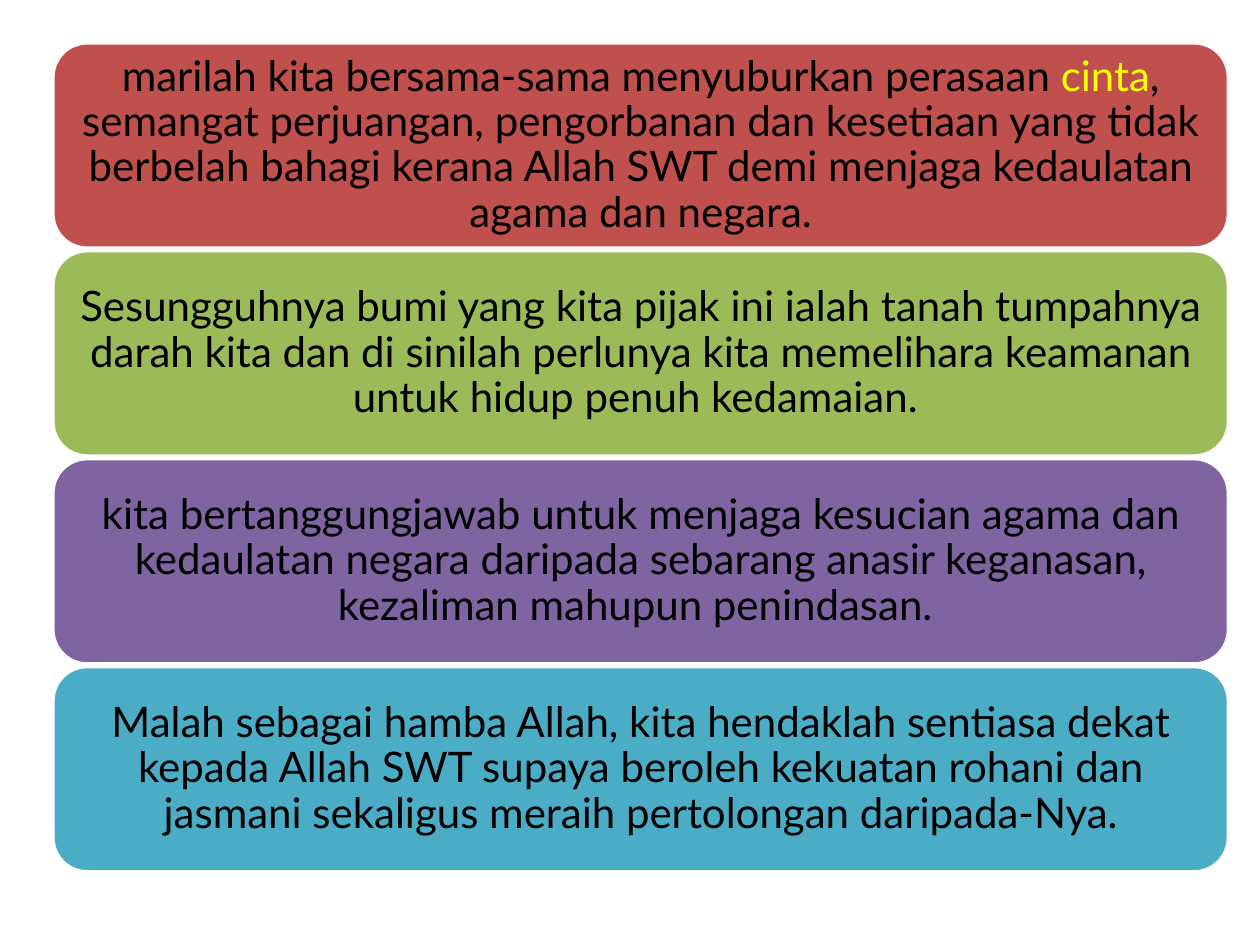
import pptx
import pptx.dml.color
import pptx.enum.shapes
import pptx.enum.text
import pptx.util


def color(hex_string):
    return pptx.dml.color.RGBColor.from_string(hex_string)


class MessageSlide:
    """Holds the style and the current slide, and draws stacked message bands."""

    font_name = "Lato"
    font_size = 24
    text_color = "000000"
    line_color = "FFFFFF"
    left, top = 0.42, 0.34
    width, height = 9.33, 1.63
    row_step = 1.65
    inset = 0.1

    def __init__(self, presentation):
        self.slide = presentation.slides.add_slide(presentation.slide_layouts[6])

    def add_band(self, row, fill, runs):
        shape = self.slide.shapes.add_shape(
            pptx.enum.shapes.MSO_SHAPE.ROUNDED_RECTANGLE,
            pptx.util.Inches(self.left),
            pptx.util.Inches(self.top + row * self.row_step),
            pptx.util.Inches(self.width),
            pptx.util.Inches(self.height),
        )
        shape.shadow.inherit = False
        shape.fill.solid()
        shape.fill.fore_color.rgb = color(fill)
        shape.line.color.rgb = color(self.line_color)
        shape.line.width = pptx.util.Pt(2)
        self.add_message(shape.text_frame, runs)

    def add_message(self, frame, runs):
        frame.word_wrap = True
        frame.vertical_anchor = pptx.enum.text.MSO_ANCHOR.MIDDLE
        frame.margin_left = frame.margin_right = pptx.util.Inches(self.inset)
        frame.margin_top = frame.margin_bottom = pptx.util.Inches(self.inset)
        paragraph = frame.paragraphs[0]
        paragraph.alignment = pptx.enum.text.PP_ALIGN.CENTER
        paragraph.line_spacing = 0.9
        paragraph.font.name = self.font_name
        paragraph.font.size = pptx.util.Pt(self.font_size)
        for text, text_color in runs:
            run = paragraph.add_run()
            run.text = text
            run.font.color.rgb = color(text_color)


def main():
    presentation = pptx.Presentation()
    presentation.slide_width = pptx.util.Inches(10)
    presentation.slide_height = pptx.util.Inches(7.5)
    message_slide = MessageSlide(presentation)
    black, yellow = MessageSlide.text_color, "FFFF00"
    bands = [
        ("C0504D", [
            ("marilah kita bersama-sama menyuburkan perasaan ", black),
            ("cinta", yellow),
            (", semangat perjuangan, pengorbanan dan kesetiaan yang tidak "
             "berbelah bahagi kerana Allah SWT demi menjaga kedaulatan "
             "agama dan negara.", black),
        ]),
        ("9BBB59", [
            ("Sesungguhnya bumi yang kita pijak ini ialah tanah tumpahnya "
             "darah kita dan di sinilah perlunya kita memelihara keamanan "
             "untuk hidup penuh kedamaian. ", black),
        ]),
        ("8064A2", [
            ("kita bertanggungjawab untuk menjaga kesucian agama dan "
             "kedaulatan negara daripada sebarang anasir keganasan, "
             "kezaliman mahupun penindasan. ", black),
        ]),
        ("4BACC6", [
            ("Malah sebagai hamba Allah, kita hendaklah sentiasa dekat "
             "kepada Allah SWT supaya beroleh kekuatan rohani dan "
             "jasmani sekaligus meraih pertolongan daripada-Nya.", black),
        ]),
    ]
    for row, (fill, runs) in enumerate(bands):
        message_slide.add_band(row, fill, runs)
    presentation.save("out.pptx")


if __name__ == "__main__":
    main()
